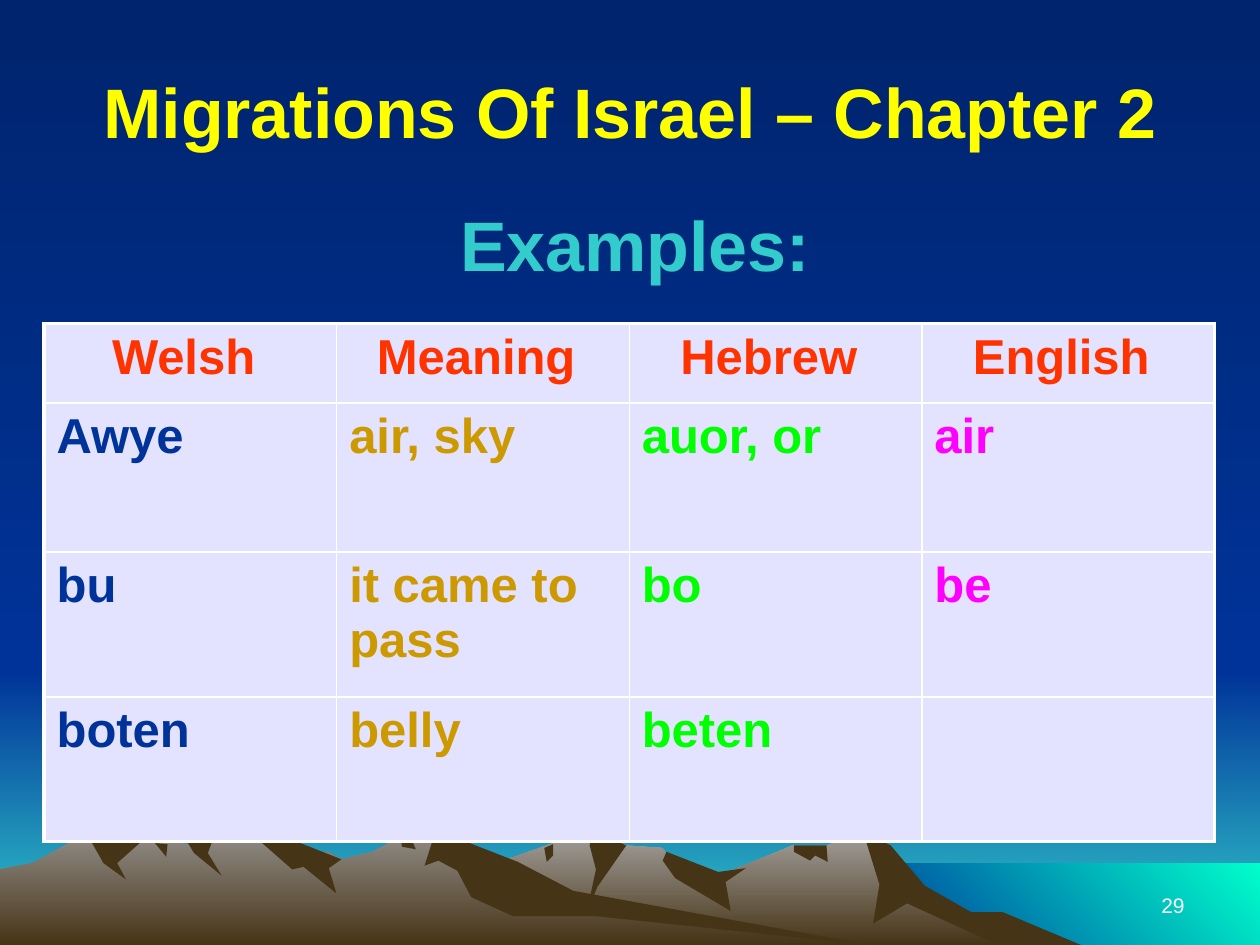
from lxml.etree import SubElement
from pptx import Presentation
from pptx.dml.color import RGBColor
from pptx.enum.shapes import MSO_SHAPE
from pptx.enum.text import MSO_ANCHOR, PP_ALIGN
from pptx.oxml.ns import qn
from pptx.util import Pt

FONT = "Arial"
WHITE, EARTH, NAVY, TURQUOISE = "FFFFFF", "463416", "003399", "33CCCC"
CELL_FILL, HEADER_INK = "E3E3FF", "FF3300"
COLUMN_INKS = [NAVY, "CC9900", "00FF00", "FF00FF"]
WORDS = [
    ["Welsh ", "Meaning ", "Hebrew ", "English "],
    ["Awye", "air, sky", "auor, or", "air"],
    ["bu", "it came to pass", "bo", "be"],
    ["boten", "belly", "beten", ""],
]
ROW_HEIGHTS = [45.4, 85, 82.8, 82.8]

# Mountain outlines in hundredths of an inch from the top left of the range;
# each fill is one colour or the top and bottom of a gradient.
MOUNTAINS = [
    (("A5A29F", EARTH), [
        (821, 92), (764, 65), (723, 40), (685, 2), (656, 13), (629, 13), (566, 39),
        (536, 32), (526, 15), (497, 13), (471, 0), (394, 27), (327, 51), (258, 92)]),
    (EARTH, [
        (796, 66), (771, 66), (734, 45), (707, 13), (685, 2), (698, 44), (693, 75),
        (720, 59), (792, 92), (858, 92)]),
    (EARTH, [(471, 0), (468, 13), (473, 32), (465, 69), (474, 46), (497, 13)]),
    (EARTH, [(529, 18), (526, 25), (536, 39), (580, 65), (576, 42), (592, 31), (570, 34)]),
    (EARTH, [(630, 13), (630, 18), (643, 25), (647, 21), (657, 26), (656, 13)]),
    (EARTH, [(432, 15), (439, 12), (439, 21), (434, 26)]),
    (("938F8B", EARTH), [
        (690, 92), (432, 54), (354, 7), (318, 6), (296, 18), (271, 24), (260, 18),
        (236, 23), (208, 0), (160, 13), (68, 4), (26, 27), (0, 32), (0, 92)]),
    (EARTH, [
        (208, 11), (232, 32), (241, 30), (267, 51), (261, 31), (271, 24), (213, 1)]),
    (EARTH, [
        (370, 10), (344, 7), (337, 29), (348, 25), (363, 33), (374, 54), (407, 69),
        (472, 69), (690, 92), (455, 49), (411, 26)]),
    (EARTH, [(318, 6), (327, 9), (330, 16), (319, 14)]),
    (EARTH, [(148, 9), (168, 11), (165, 19), (176, 37), (154, 19)]),
    (EARTH, [(133, 12), (132, 22), (123, 11)]),
    (EARTH, [(111, 11), (93, 27), (100, 40), (82, 27), (77, 18), (69, 4)]),
]


def color(hex_code):
    return RGBColor.from_string(hex_code)


def paint_gradient(fill, start, end, angle=270):
    """Blend two colours; the angle is counter-clockwise, 270 running downwards."""
    fill.gradient()
    fill.gradient_angle = angle
    for stop, hex_code in zip(fill.gradient_stops, (start, end)):
        stop.color.rgb = color(hex_code)


def clear_outline(shape):
    shape.shadow.inherit = False
    shape.line.fill.background()


def add_gradient_band(slide, box, start, end, angle=270):
    band = slide.shapes.add_shape(MSO_SHAPE.RECTANGLE, *map(Pt, box))
    clear_outline(band)
    paint_gradient(band.fill, start, end, angle)


def add_mountains(slide, left, top):
    for paint, outline in MOUNTAINS:
        builder = slide.shapes.build_freeform(*outline[0], scale=Pt(0.72))
        builder.add_line_segments(outline[1:], close=True)
        ridge = builder.convert_to_shape(Pt(left), Pt(top))
        clear_outline(ridge)
        if isinstance(paint, tuple):
            paint_gradient(ridge.fill, *paint)
        else:
            ridge.fill.solid()
            ridge.fill.fore_color.rgb = color(paint)


def add_landscape(slide, left, top, width, height):
    horizon, shore_left, shore_top = 383.8, 491.8, 493.2
    add_gradient_band(slide, (left, top + horizon, width, height - horizon), NAVY, TURQUOISE)
    add_gradient_band(slide, (left, top, width, horizon), "00246D", NAVY)
    add_gradient_band(
        slide, (left + shore_left, top + shore_top, width - shore_left, height - shore_top),
        NAVY, "00FFCC", 45)
    add_mountains(slide, left, top + 473.8)


def style_text(text_frame, size, ink, align, bold=True):
    for paragraph in text_frame.paragraphs:
        paragraph.alignment = align
        for run in paragraph.runs:
            run.font.name, run.font.size, run.font.bold = FONT, Pt(size), bold
            run.font.color.rgb = color(ink)


def add_label(slide, box, text, size, ink, align, bold=True, anchor=MSO_ANCHOR.TOP):
    frame = slide.shapes.add_textbox(*map(Pt, box)).text_frame
    frame.word_wrap = True
    frame.vertical_anchor = anchor
    frame.text = text
    style_text(frame, size, ink, align, bold)


def place_title(slide, left, top, width, height):
    title = slide.shapes.title
    title.left, title.top, title.width, title.height = map(Pt, (left, top, width, height))
    title.text_frame.text = "Migrations Of Israel – Chapter 2"
    title.text_frame.vertical_anchor = MSO_ANCHOR.MIDDLE
    style_text(title.text_frame, 40, "FFFF00", PP_ALIGN.CENTER)
    slide.shapes.element.append(title.element)  # in front of the landscape


def draw_borders(cell, outer_sides):
    properties = cell._tc.get_or_add_tcPr()
    for side in "LRTB":
        width = Pt(2.25 if side in outer_sides else 1)
        border = SubElement(properties, qn(f"a:ln{side}"), w=str(width))
        SubElement(SubElement(border, qn("a:solidFill")), qn("a:srgbClr"), val=WHITE)


def add_word_table(slide, left, top, width, height):
    last_row, last_column = len(WORDS) - 1, len(COLUMN_INKS) - 1
    table = slide.shapes.add_table(
        last_row + 1, last_column + 1, *map(Pt, (left, top, width, height))).table
    table.first_row = table.horz_banding = False
    for column in table.columns:
        column.width = Pt(width / len(COLUMN_INKS))
    for r, words in enumerate(WORDS):
        table.rows[r].height = Pt(ROW_HEIGHTS[r])
        for c, word in enumerate(words):
            cell = table.cell(r, c)
            edges = {"L": c == 0, "R": c == last_column, "T": r == 0, "B": r == last_row}
            draw_borders(cell, [side for side, is_outer in edges.items() if is_outer])
            cell.fill.solid()
            cell.fill.fore_color.rgb = color(CELL_FILL)
            cell.text_frame.text = word
            if r == 0:
                style_text(cell.text_frame, 28, HEADER_INK, PP_ALIGN.CENTER)
            else:
                style_text(cell.text_frame, 28, COLUMN_INKS[c], PP_ALIGN.LEFT)


def main():
    deck = Presentation()
    deck.slide_width, deck.slide_height = Pt(720), Pt(540)
    slide = deck.slides.add_slide(deck.slide_layouts[5])
    paint_gradient(slide.background.fill, "001847", NAVY)
    add_landscape(slide, 0, 0, 720, 540)
    add_label(slide, (516, 492, 168, 36), "29", 12, WHITE, PP_ALIGN.RIGHT,
              bold=False, anchor=MSO_ANCHOR.BOTTOM)
    place_title(slide, 36, 18, 648, 90)
    add_word_table(slide, 25.2, 185, 668.8, sum(ROW_HEIGHTS))
    add_label(slide, (127.4, 111.6, 471, 55.4), "Examples:", 40, TURQUOISE, PP_ALIGN.CENTER)
    deck.save("out.pptx")


if __name__ == "__main__":
    main()
